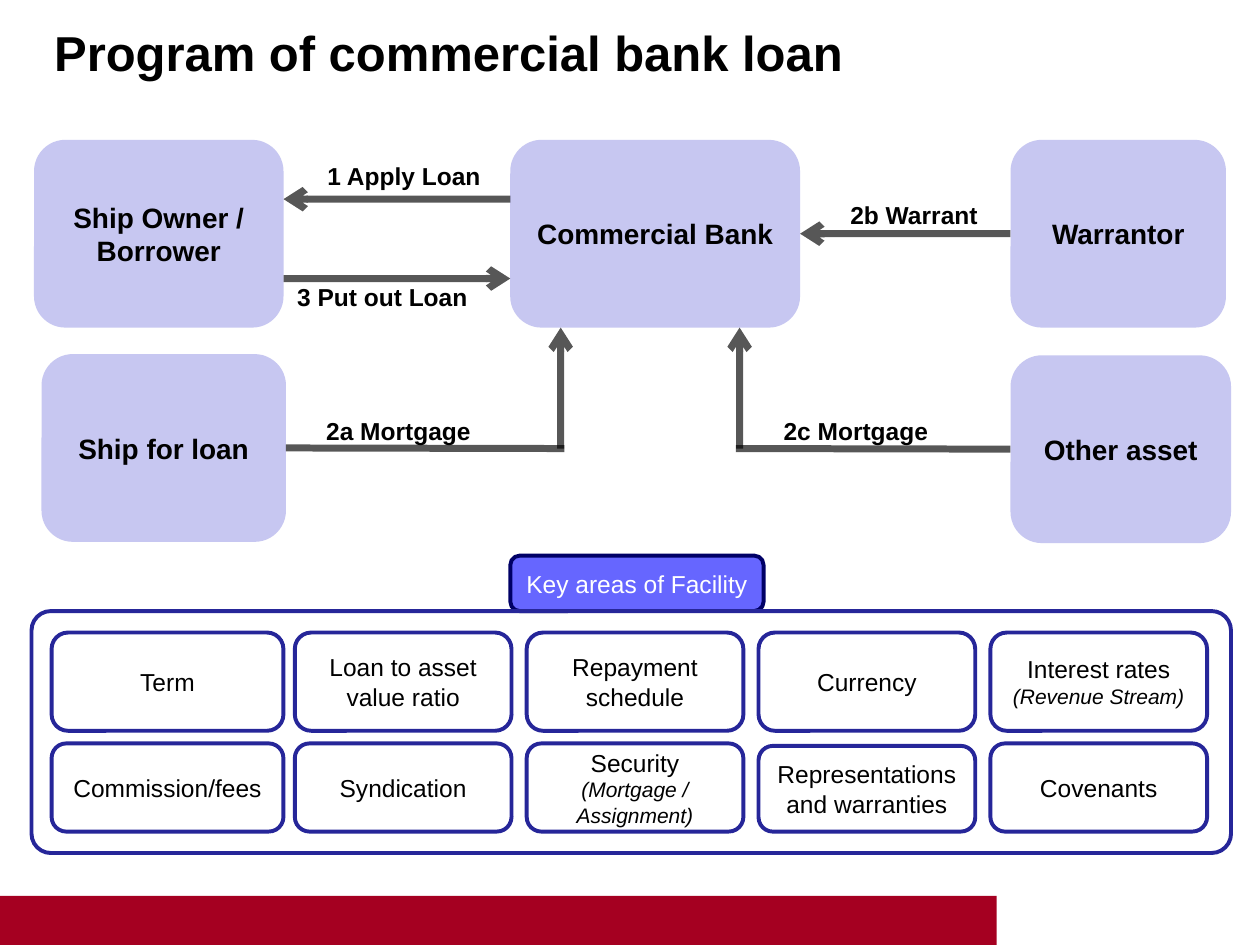
from lxml.etree import SubElement
from pptx import Presentation
from pptx.dml.color import RGBColor as RGB
from pptx.enum.shapes import MSO_CONNECTOR as Line, MSO_SHAPE as Shape
from pptx.enum.text import MSO_ANCHOR as Anchor, MSO_AUTO_SIZE as Fit, PP_ALIGN as Align
from pptx.oxml.ns import qn
from pptx.util import Inches, Pt

INK = {"text": "000000", "white": "FFFFFF", "node": "ADADEB", "bar": "A50021",
       "tab": "6666FF", "edge": "000066", "frame": "262699"}
PAGE = (0, 0, 10, 7.5)


def part(box, left, top, wide=0, high=0):
    """Turn percentages of a box into inches on the slide."""
    x, y, w, h = box
    return x + w * left / 100, y + h * top / 100, w * wide / 100, h * high / 100


def write(para, text, size, color="text", bold=False, slant=False):
    """Add one run to a paragraph."""
    run = para.add_run()
    run.text = text
    font = run.font
    font.name, font.size, font.bold, font.italic = "Arial", Pt(size), bold, slant
    font.color.rgb = RGB.from_string(INK[color])


def fade(shape, share):
    """Make the colour of a shape partly transparent."""
    for tint in shape._element.spPr.iter(qn("a:srgbClr")):
        SubElement(tint, qn("a:alpha"), val=str(share * 1000))


def block(slide, box, kind=Shape.ROUNDED_RECTANGLE, fill=None, line=None):
    """Draw a preset shape with centred text."""
    shape = slide.shapes.add_shape(kind, *map(Inches, box))
    shape.shadow.inherit = False
    if fill:
        shape.fill.solid()
        shape.fill.fore_color.rgb = RGB.from_string(INK[fill])
    else:
        shape.fill.background()
    if line:
        shape.line.color.rgb = RGB.from_string(INK[line])
        shape.line.width = Pt(2.25)
    else:
        shape.line.fill.background()
    frame = shape.text_frame
    frame.word_wrap, frame.vertical_anchor = True, Anchor.MIDDLE
    frame.paragraphs[0].alignment = Align.CENTER
    return shape


def node(slide, box, text):
    """Draw one party of the loan."""
    shape = block(slide, box, fill="node")
    fade(shape, 68)
    write(shape.text_frame.paragraphs[0], text, 16, bold=True)
    return shape


def link(slide, box, start, stop, head=True, begin=None, end=None):
    """Draw a grey line, joined to the given shapes and sides."""
    ends = [Inches(v) for spot in (start, stop) for v in part(box, *spot)[:2]]
    wire = slide.shapes.add_connector(Line.STRAIGHT, *ends)
    if begin:
        wire.begin_connect(*begin)
    if end:
        wire.end_connect(*end)
    wire.line.color.rgb = RGB.from_string(INK["text"])
    wire.line.width = Pt(4)
    fade(wire, 65)
    if head:
        SubElement(wire.line._get_or_add_ln(), qn("a:tailEnd"), type="arrow")
    SubElement(wire._element.spPr, qn("a:effectLst"))


def label(slide, box, text):
    """Write a bold caption beside a line."""
    note = slide.shapes.add_textbox(*map(Inches, box))
    note.text_frame.word_wrap = True
    write(note.text_frame.paragraphs[0], text, 14, bold=True)


def heading(slide, box):
    """Place and format the title."""
    title = slide.shapes.title
    title.left, title.top, title.width, title.height = map(Inches, box)
    frame = title.text_frame
    frame.auto_size, frame.vertical_anchor = Fit.NONE, Anchor.MIDDLE
    frame.paragraphs[0].alignment = Align.LEFT
    write(frame.paragraphs[0], "Program of commercial bank loan", 28, bold=True)


def flow(slide, box):
    """Draw the parties and the steps between them."""
    high, low, mid = 46.56, 53.13, 76.56
    parties = [("Ship Owner / Borrower", 2.7, 0, 19.8), ("Warrantor", 80.2, 0, 17.1),
               ("Commercial Bank", 40.5, 0, 23), ("Ship for loan", 3.3, low, 19.4),
               ("Other asset", 80.2, low + 0.3, 17.5)]
    owner, backer, bank, ship, asset = [
        node(slide, part(box, x, y, w, high), text) for text, x, y, w in parties]
    link(slide, box, (22.5, 34.4), (40.5, 34.4))
    link(slide, box, (80.2, 23.3), (63.5, 23.3), begin=(backer, 1), end=(bank, 3))
    link(slide, box, (40.5, 14.7), (22.5, 14.7))
    link(slide, box, (22.7, mid), (44.8, mid), head=False, begin=(ship, 3))
    link(slide, box, (80.2, mid), (58.4, mid), head=False, begin=(asset, 1))
    for x in (44.5, 58.7):
        link(slide, box, (x, mid), (x, high))
    for text, x, y in [("1 Apply Loan", 25, 3.75), ("3 Put out Loan", 22.6, 33.75),
                       ("2b Warrant", 66.5, 13.44), ("2a Mortgage", 24.9, 66.88),
                       ("2c Mortgage", 61.2, 66.88)]:
        label(slide, part(box, x, y, 16.1, 10.63), text)


def facility(slide, box):
    """Draw the tab, the frame and the grid of key areas."""
    tab = block(slide, part(box, 39.92, 0, 21.11, 18.64), fill="tab", line="edge")
    tab.text_frame.margin_left = tab.text_frame.margin_right = Inches(0.05)
    write(tab.text_frame.paragraphs[0], "Key areas of Facility", 14, "white")
    frame = block(slide, part(box, 0, 18.64, 100, 81.36), line="frame")
    frame.adjustments[0] = 0.08
    rows = [(25.85, 33.05, ["Term", "Loan to asset value ratio", "Repayment schedule",
                            "Currency", "Interest rates |(Revenue Stream)"]),
            (63.14, 29.66, ["Commission/fees", "Syndication",
                            "Security |(Mortgage / Assignment)",
                            "Representations and warranties", "Covenants"])]
    for top, high, names in rows:
        for col, name in enumerate(names):
            left, wide = (2.62 + 19.33 * col, 18.07) if col else (1.68, 19.33)
            drop = 0.84 if name.startswith("Rep") and top > 50 else 0
            spot = part(box, left, top + drop, wide, high - drop)
            para = block(slide, spot, line="frame").text_frame.paragraphs[0]
            main, _, extra = name.partition("|")
            write(para, main, 14)
            if extra:
                write(para, extra, 12, slant=True)


def main():
    """Build and save the slide."""
    deck = Presentation()
    deck.slide_width, deck.slide_height = map(Inches, PAGE[2:])
    slide = deck.slides.add_slide(deck.slide_layouts[5])
    block(slide, part(PAGE, 0, 94.8, 79.1, 5.2), Shape.RECTANGLE, fill="bar")
    heading(slide, part(PAGE, 3.3, 0, 91.9, 11.07))
    flow(slide, part(PAGE, 0, 14.8, 100, 42.67))
    facility(slide, part(PAGE, 2.5, 58.8, 95.2, 31.47))
    deck.save("out.pptx")


if __name__ == "__main__":
    main()
